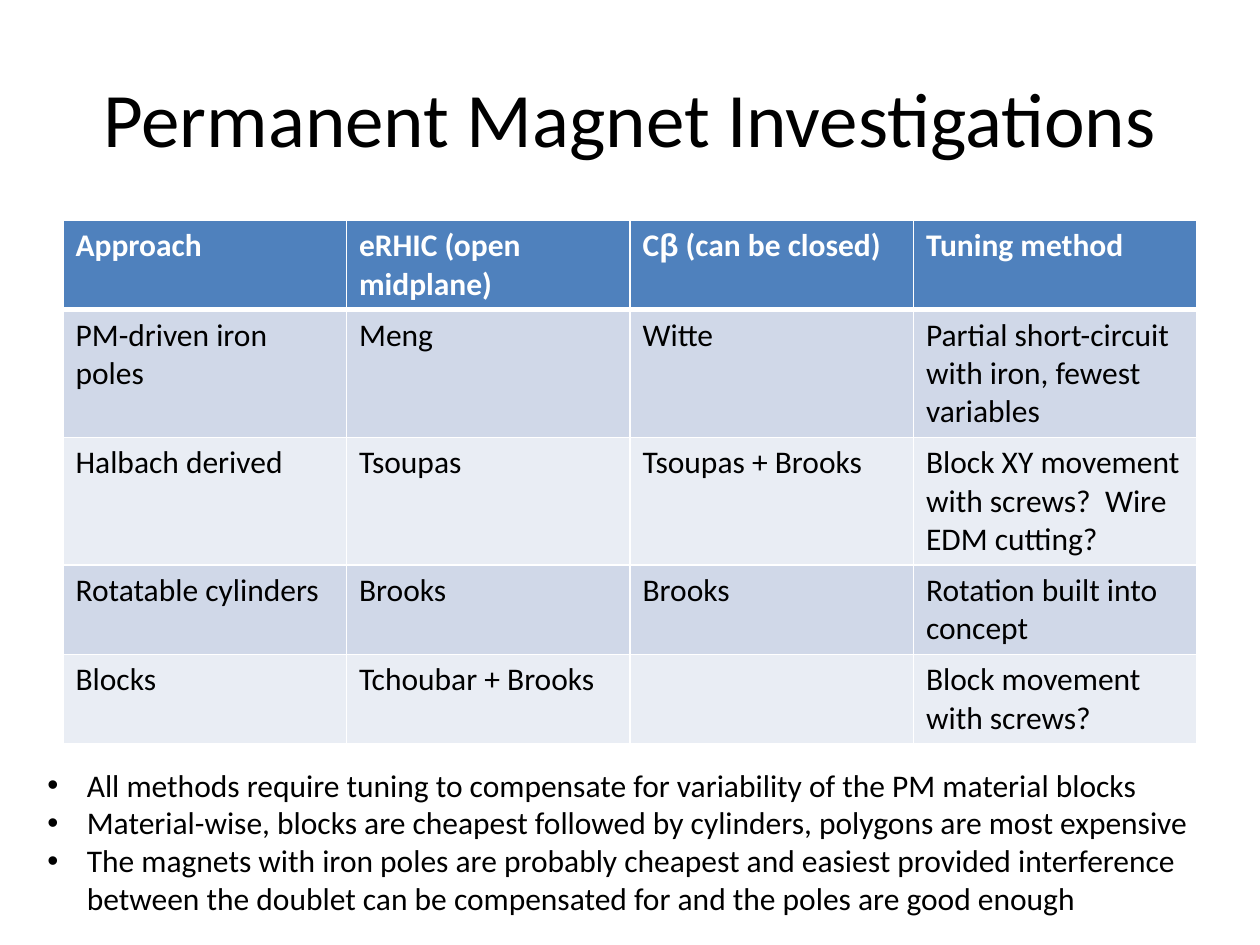
from dataclasses import dataclass

from lxml import etree
from pptx import Presentation
from pptx.dml.color import RGBColor
from pptx.enum.text import MSO_ANCHOR, PP_ALIGN
from pptx.oxml.ns import qn
from pptx.util import Pt

CENTER, LEFT = PP_ALIGN.CENTER, PP_ALIGN.LEFT
MIDDLE, TOP = MSO_ANCHOR.MIDDLE, MSO_ANCHOR.TOP


@dataclass(frozen=True)
class Theme:
    font: str = "Calibri"
    greek_font: str = "Arial"
    title_size: float = 44
    body_size: float = 18
    ink: str = "000000"
    white: str = "FFFFFF"
    header: str = "4F81BD"
    bands: tuple = ("D0D8E8", "E9EDF4")
    rule: float = 1
    header_rule: float = 3
    bullet_indent: float = 22.5


THEME = Theme()

HEADINGS = ("Approach", "eRHIC (open midplane)", "Cβ (can be closed)", "Tuning method")
APPROACHES = (
    ("PM-driven iron poles", "Meng", "Witte",
     "Partial short-circuit with iron, fewest variables"),
    ("Halbach derived", "Tsoupas", "Tsoupas + Brooks",
     "Block XY movement with screws?  Wire EDM cutting?"),
    ("Rotatable cylinders", "Brooks", "Brooks", "Rotation built into concept"),
    ("Blocks", "Tchoubar + Brooks", "", "Block movement with screws?"),
)
ROW_HEIGHTS = (51, 73, 73, 51, 51)
REMARKS = (
    "All methods require tuning to compensate for variability of the PM material blocks",
    "Material-wise, blocks are cheapest followed by cylinders, polygons are most expensive",
    "The magnets with iron poles are probably cheapest and easiest provided interference "
    "between the doublet can be compensated for and the poles are good enough",
)


def write(paragraph, text, size=THEME.body_size, color=THEME.ink, bold=False, align=LEFT):
    paragraph.alignment = align
    before, beta, after = text.partition("β")
    for part, font in ((before, THEME.font), (beta, THEME.greek_font), (after, THEME.font)):
        if part:
            run = paragraph.add_run()
            run.text = part
            run.font.name = font
            run.font.size = Pt(size)
            run.font.bold = bold
            run.font.color.rgb = RGBColor.from_string(color)


def add_text_frame(slide, box, anchor=TOP):
    frame = slide.shapes.add_textbox(*map(Pt, box)).text_frame
    frame.word_wrap = True
    frame.vertical_anchor = anchor
    return frame


def add_bullet(paragraph):
    properties = paragraph._p.get_or_add_pPr()
    properties.set("marL", str(Pt(THEME.bullet_indent)))
    properties.set("indent", str(-Pt(THEME.bullet_indent)))
    etree.SubElement(properties, qn("a:buFont"), typeface="Arial")
    etree.SubElement(properties, qn("a:buChar"), char="•")


def set_borders(cell, top, bottom):
    properties = cell._tc.get_or_add_tcPr()
    widths = {"lnL": THEME.rule, "lnR": THEME.rule, "lnT": top, "lnB": bottom}
    for side, width in widths.items():
        line = etree.SubElement(properties, qn(f"a:{side}"), w=str(Pt(width)))
        fill = etree.SubElement(line, qn("a:solidFill"))
        etree.SubElement(fill, qn("a:srgbClr"), val=THEME.white)


def add_title(slide, box):
    frame = add_text_frame(slide, box, anchor=MIDDLE)
    write(frame.paragraphs[0], "Permanent Magnet Investigations",
          size=THEME.title_size, align=CENTER)


def add_approach_table(slide, box):
    rows = (HEADINGS, *APPROACHES)
    table = slide.shapes.add_table(len(rows), len(HEADINGS), *map(Pt, box)).table
    table.horz_banding = False
    for column in table.columns:
        column.width = Pt(box[2] / len(HEADINGS))
    for index, (labels, height) in enumerate(zip(rows, ROW_HEIGHTS)):
        table.rows[index].height = Pt(height)
        is_header = index == 0
        background = THEME.header if is_header else THEME.bands[(index - 1) % 2]
        top = THEME.header_rule if index == 1 else THEME.rule
        bottom = THEME.header_rule if is_header else THEME.rule
        for cell, label in zip(table.rows[index].cells, labels):
            set_borders(cell, top, bottom)
            cell.fill.solid()
            cell.fill.fore_color.rgb = RGBColor.from_string(background)
            write(cell.text_frame.paragraphs[0], label, bold=is_header,
                  color=THEME.white if is_header else THEME.ink)


def add_remarks(slide, box):
    frame = add_text_frame(slide, box)
    for index, remark in enumerate(REMARKS):
        paragraph = frame.add_paragraph() if index else frame.paragraphs[0]
        add_bullet(paragraph)
        write(paragraph, remark)


def main():
    presentation = Presentation()
    presentation.slide_width, presentation.slide_height = Pt(720), Pt(540)
    slide = presentation.slides.add_slide(presentation.slide_layouts[6])
    add_title(slide, (36, 21.6, 648, 90))
    add_approach_table(slide, (36, 126, 648, sum(ROW_HEIGHTS)))
    add_remarks(slide, (20, 434, 680.5, 94.5))
    presentation.save("out.pptx")


if __name__ == "__main__":
    main()
